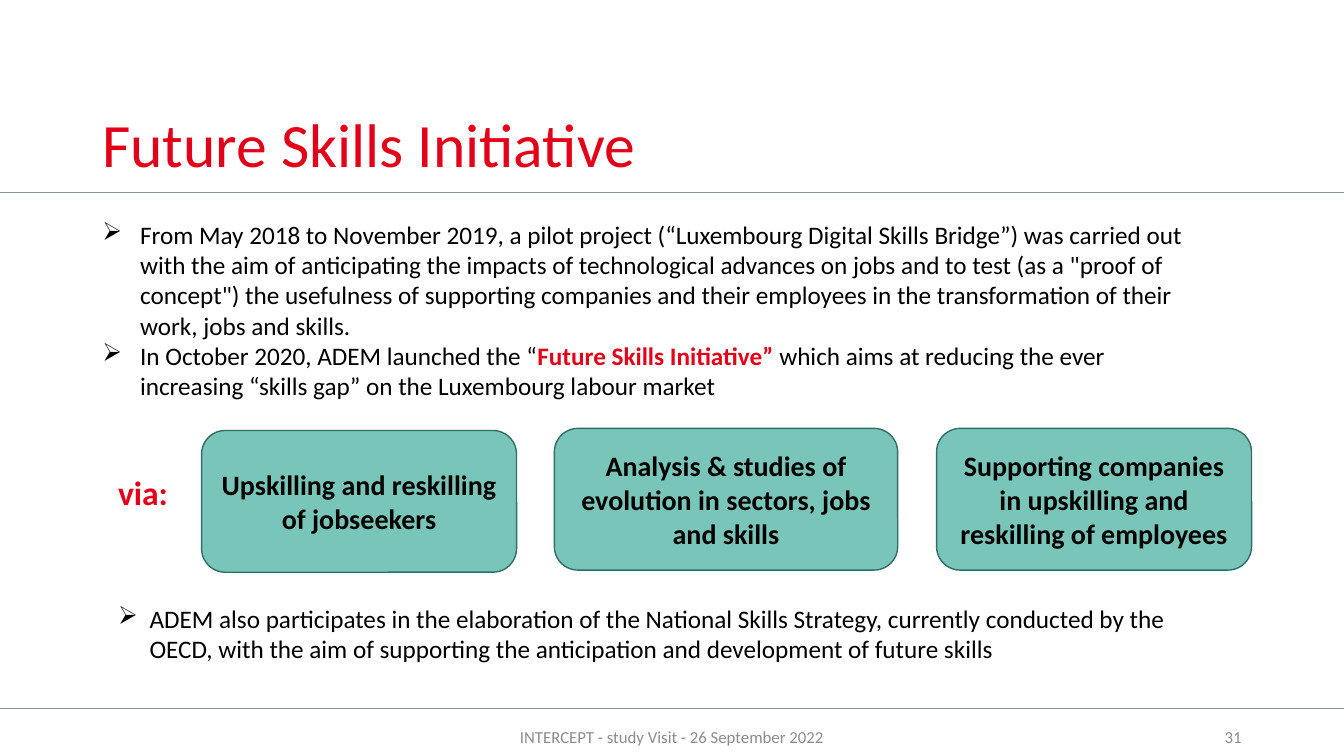
from lxml.etree import SubElement
from pptx import Presentation
from pptx.dml.color import RGBColor
from pptx.enum.shapes import MSO_CONNECTOR, MSO_SHAPE
from pptx.enum.text import MSO_ANCHOR, PP_ALIGN
from pptx.oxml.ns import qn
from pptx.util import Pt

PX = 9525
WIDTH, HEIGHT = 1280, 720
RED = RGBColor(0xE3, 0x00, 0x19)
BLACK = RGBColor(0x00, 0x00, 0x00)
GREY = RGBColor(0x8C, 0x8C, 0x8C)
RULE_GREY = RGBColor(0x87, 0x91, 0x9A)
TEAL = RGBColor(0x7A, 0xC5, 0xB9)
DARK_TEAL = RGBColor(0x30, 0x6F, 0x65)

PILOT = (
    "From May 2018 to November 2019, a pilot project (“Luxembourg Digital Skills Bridge”) "
    "was carried out with the aim of anticipating the impacts of technological advances on "
    'jobs and to test (as a "proof of concept") the usefulness of supporting companies and '
    "their employees in the transformation of their work, jobs and skills."
)
LAUNCH = [
    ("In October 2020, ADEM launched the “", BLACK, False),
    ("Future Skills Initiative” ", RED, True),
    ("which aims at reducing the ever increasing “skills gap” on the Luxembourg labour market",
     BLACK, False),
]
STRATEGY = (
    "ADEM also participates in the elaboration of the National Skills Strategy, currently "
    "conducted by the OECD, with the aim of supporting the anticipation and development of "
    "future skills"
)
ACTIONS = [
    (192, 410, 300, "Upskilling and reskilling of jobseekers"),
    (528, 408, 327, "Analysis & studies of evolution in sectors, jobs and skills"),
    (892, 408, 300, "Supporting companies in upskilling and reskilling of employees"),
]


def emu(*lengths):
    """Turn px lengths into EMU."""
    return [n * PX for n in lengths]


def add_bullet(p, indent):
    """Give a paragraph an arrow bullet with a hanging indent in px."""
    pPr = p._p.get_or_add_pPr()
    pPr.set("marL", str(indent * PX))
    pPr.set("indent", str(-indent * PX))
    SubElement(pPr, qn("a:buChar")).set("char", "➢")


def write(tf, *paragraphs, size=18, color=BLACK, bold=False, align=PP_ALIGN.LEFT,
          anchor=MSO_ANCHOR.TOP, wrap=True, indent=0, spacing=None):
    """Fill a text frame with paragraphs, each a string or a list of (text, color, bold)."""
    tf.word_wrap = wrap
    tf.vertical_anchor = anchor
    for i, content in enumerate(paragraphs):
        p = tf.add_paragraph() if i else tf.paragraphs[0]
        if indent:
            add_bullet(p, indent)
        p.alignment = align
        p.line_spacing = spacing
        runs = [(content, color, bold)] if isinstance(content, str) else content
        for text, run_color, run_bold in runs:
            r = p.add_run()
            r.text = text
            r.font.name = "Calibri"
            r.font.size = Pt(size)
            r.font.bold = run_bold
            r.font.color.rgb = run_color


def add_text(s, box, *paragraphs, **fmt):
    """Add a text box at a px box of left, top, width and height."""
    write(s.shapes.add_textbox(*emu(*box)).text_frame, *paragraphs, **fmt)


def add_rule(s, y):
    """Draw a thin line across the whole slide."""
    line = s.shapes.add_connector(MSO_CONNECTOR.STRAIGHT, *emu(0, y, WIDTH, y))
    line.line.color.rgb = RULE_GREY
    line.line.width = Pt(0.5)
    SubElement(line._element.spPr, qn("a:effectLst"))


def add_action(s, x, y, w, text):
    """Add a rounded teal box with a bold centred label."""
    sp = s.shapes.add_shape(MSO_SHAPE.ROUNDED_RECTANGLE, *emu(x, y, w, 135))
    sp.shadow.inherit = False
    sp.fill.solid()
    sp.fill.fore_color.rgb = TEAL
    sp.line.color.rgb = DARK_TEAL
    sp.line.width = Pt(1)
    write(sp.text_frame, text, size=20, bold=True, align=PP_ALIGN.CENTER,
          anchor=MSO_ANCHOR.MIDDLE)


def main():
    """Build the slide and save it."""
    prs = Presentation()
    prs.slide_width, prs.slide_height = emu(WIDTH, HEIGHT)
    s = prs.slides.add_slide(prs.slide_layouts[6])
    for y in (183, 675):
        add_rule(s, y)
    add_text(s, (88, 38, 1034, 139), "Future Skills Initiative", size=44, color=RED,
             anchor=MSO_ANCHOR.BOTTOM, spacing=0.9)
    add_text(s, (88, 204, 1076, 223), PILOT, LAUNCH, indent=36)
    add_text(s, (103, 445, 75, 48), "via:", size=24, color=RED, bold=True, wrap=False)
    for action in ACTIONS:
        add_action(s, *action)
    add_text(s, (103, 570, 1062, 68), STRATEGY, indent=30)
    footer = {"size": 12, "color": GREY, "anchor": MSO_ANCHOR.MIDDLE}
    add_text(s, (424, 683, 432, 38), "INTERCEPT - study Visit - 26 September 2022",
             align=PP_ALIGN.CENTER, **footer)
    add_text(s, (904, 683, 288, 38), "31", align=PP_ALIGN.RIGHT, **footer)
    prs.save("out.pptx")


if __name__ == "__main__":
    main()
